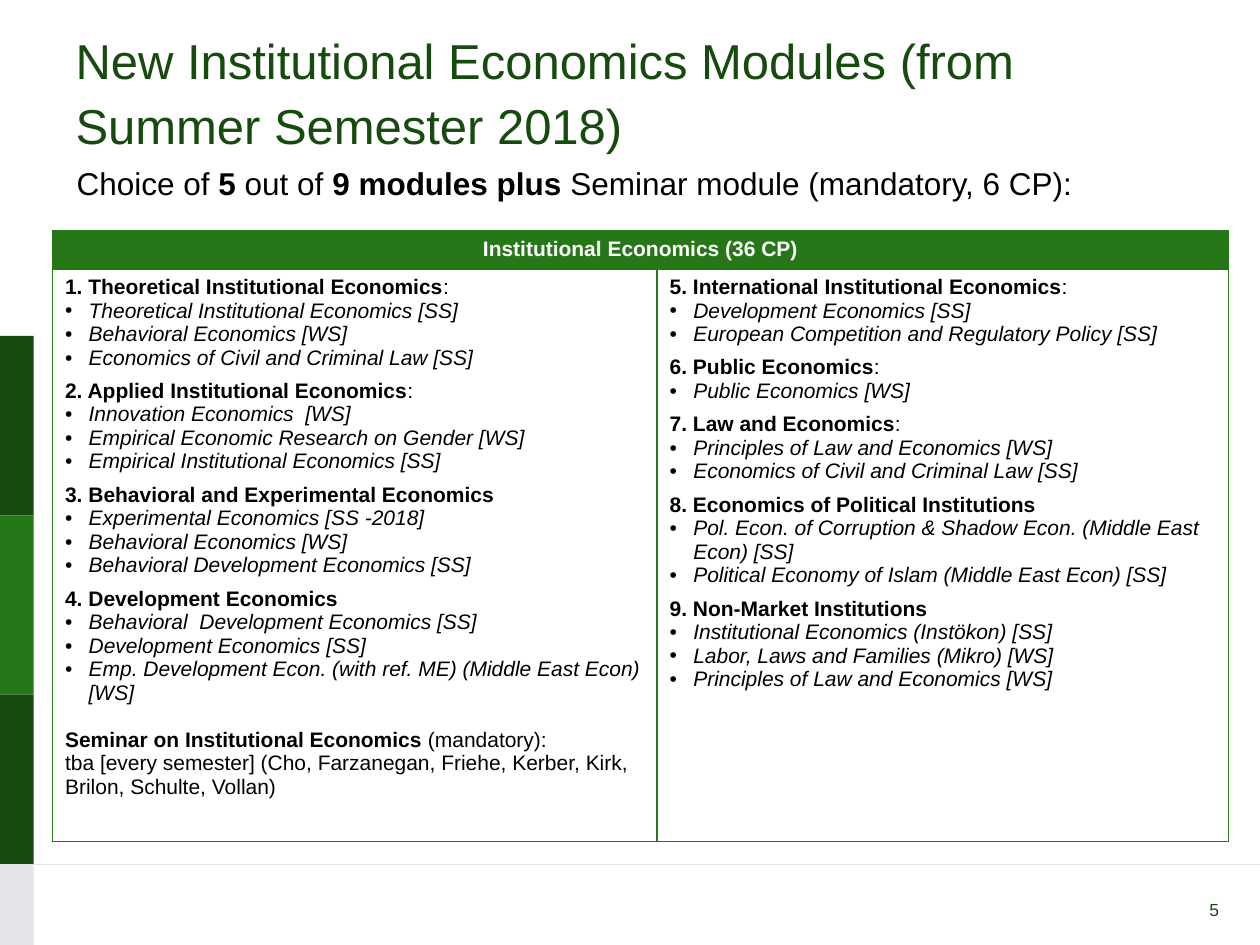
from lxml import etree
from pptx import Presentation
from pptx.dml.color import RGBColor
from pptx.enum import shapes, text
from pptx.oxml import ns
from pptx.util import Pt

DARK_GREEN = RGBColor(0x17, 0x4A, 0x0E)
GREEN = RGBColor(0x25, 0x77, 0x17)
GREY = RGBColor(0xE4, 0xE5, 0xEA)
BLACK = RGBColor(0, 0, 0)
WHITE = RGBColor(0xFF, 0xFF, 0xFF)

BOLD = {"bold": True}
ITALIC = {"italic": True}
SECTION_GAP = 5.6
SEMINAR_GAP = 13.4

LEFT_SECTIONS = [
    ("1. Theoretical Institutional Economics", ":", [
        "Theoretical Institutional Economics [SS]",
        "Behavioral Economics [WS]",
        "Economics of Civil and Criminal Law [SS]"]),
    ("2. Applied Institutional Economics", ":", [
        "Innovation Economics  [WS]",
        "Empirical Economic Research on Gender [WS]",
        "Empirical Institutional Economics [SS]"]),
    ("3. Behavioral and Experimental Economics", "", [
        "Experimental Economics [SS -2018]",
        "Behavioral Economics [WS]",
        "Behavioral Development Economics [SS]"]),
    ("4. Development Economics", "", [
        "Behavioral  Development Economics [SS]",
        "Development Economics [SS]",
        "Emp. Development Econ. (with ref. ME) (Middle East Econ) [WS]"]),
    ("Seminar on Institutional Economics ",
     "(mandatory): \ntba [every semester] (Cho, Farzanegan, Friehe, Kerber, "
     "Kirk, Brilon, Schulte, Vollan)", []),
]
RIGHT_SECTIONS = [
    ("5. International Institutional Economics", ":", [
        "Development Economics [SS]",
        "European Competition and Regulatory Policy [SS]"]),
    ("6. Public Economics", ":", ["Public Economics [WS]"]),
    ("7. Law and Economics", ":", [
        "Principles of Law and Economics [WS]",
        "Economics of Civil and Criminal Law [SS]"]),
    ("8. Economics of Political Institutions", "", [
        "Pol. Econ. of Corruption & Shadow Econ. (Middle East Econ) [SS]",
        "Political Economy of Islam (Middle East Econ) [SS]"]),
    ("9. Non-Market Institutions", "", [
        "Institutional Economics (Instökon) [SS]",
        "Labor, Laws and Families (Mikro) [WS]",
        "Principles of Law and Economics [WS]"]),
]


class SlideBuilder:
    font_name = "Arial"
    indent = Pt(13.5)
    tab = Pt(14.4)

    def __init__(self, slide):
        self.slide = slide

    def apply(self, target, values):
        for name, value in values.items():
            setattr(target, name, value)

    def add_runs(self, paragraph, pieces, size, color=BLACK):
        for content, style in pieces:
            for index, line in enumerate(content.split("\n")):
                if index:
                    paragraph.add_line_break()
                run = paragraph.add_run()
                run.text = line
                values = {"name": self.font_name, "size": Pt(size),
                          "bold": False, "italic": False, **style}
                self.apply(run.font, values)
                run.font.color.rgb = color

    def bar(self, left, top, width, height, color):
        shape = self.slide.shapes.add_shape(
            shapes.MSO_SHAPE.RECTANGLE, Pt(left), Pt(top), Pt(width), Pt(height))
        shape.shadow.inherit = False
        shape.fill.solid()
        shape.fill.fore_color.rgb = color
        shape.line.fill.background()

    def line(self, left, top, right, color):
        connector = self.slide.shapes.add_connector(
            shapes.MSO_CONNECTOR.STRAIGHT, Pt(left), Pt(top), Pt(right), Pt(top))
        connector.line.color.rgb = color
        connector.line.width = Pt(0.5)
        etree.SubElement(connector._element.spPr, ns.qn("a:effectLst"))

    def title(self, content, left, top, width, height):
        shape = self.slide.shapes.title
        self.apply(shape, {"left": Pt(left), "top": Pt(top),
                           "width": Pt(width), "height": Pt(height)})
        frame = shape.text_frame
        self.apply(frame, {"word_wrap": True, "auto_size": text.MSO_AUTO_SIZE.NONE,
                           "vertical_anchor": text.MSO_ANCHOR.MIDDLE})
        paragraph = frame.paragraphs[0]
        self.apply(paragraph, {"alignment": text.PP_ALIGN.LEFT, "line_spacing": 1.1})
        self.add_runs(paragraph, [(content, {})], 28, DARK_GREEN)

    def label(self, pieces, left, top, width, height, size, color):
        shape = self.slide.shapes.add_textbox(
            Pt(left), Pt(top), Pt(width), Pt(height))
        shape.text_frame.word_wrap = True
        self.add_runs(shape.text_frame.paragraphs[0], pieces, size, color)

    def bullet(self, paragraph):
        properties = paragraph._p.get_or_add_pPr()
        properties.set("marL", str(self.indent))
        properties.set("indent", str(-self.indent))
        font = etree.SubElement(properties, ns.qn("a:buFont"))
        font.set("typeface", self.font_name)
        etree.SubElement(properties, ns.qn("a:buChar")).set("char", "•")
        tabs = etree.SubElement(properties, ns.qn("a:tabLst"))
        stop = etree.SubElement(tabs, ns.qn("a:tab"))
        stop.set("pos", str(self.tab))
        stop.set("algn", "l")

    def sections(self, cell, entries):
        frame = cell.text_frame
        for index, (heading, suffix, items) in enumerate(entries):
            paragraph = frame.add_paragraph() if index else frame.paragraphs[0]
            if index:
                paragraph.space_before = Pt(SECTION_GAP if items else SEMINAR_GAP)
            pieces = [(heading, BOLD), (suffix, {})]
            self.add_runs(paragraph, [piece for piece in pieces if piece[0]], 12)
            for item in items:
                paragraph = frame.add_paragraph()
                self.bullet(paragraph)
                self.add_runs(paragraph, [(item, ITALIC)], 12)

    def style_cell(self, cell, fill):
        properties = cell._tc.get_or_add_tcPr()
        for side in ("lnL", "lnR", "lnT", "lnB"):
            border = etree.SubElement(properties, ns.qn("a:" + side), w=str(Pt(1)))
            solid = etree.SubElement(border, ns.qn("a:solidFill"))
            etree.SubElement(solid, ns.qn("a:srgbClr"), val=str(GREEN))
        cell.fill.solid()
        cell.fill.fore_color.rgb = fill

    def module_table(self, heading, columns, left, top, widths, heights):
        table = self.slide.shapes.add_table(
            len(heights), len(widths), Pt(left), Pt(top),
            Pt(sum(widths)), Pt(sum(heights))).table
        table.horz_banding = False
        for column, width in zip(table.columns, widths):
            column.width = Pt(width)
        for row, height, fill in zip(table.rows, heights, (GREEN, WHITE)):
            row.height = Pt(height)
            for cell in row.cells:
                self.style_cell(cell, fill)
        header = table.cell(0, 0)
        header.merge(table.cell(0, len(widths) - 1))
        paragraph = header.text_frame.paragraphs[0]
        paragraph.alignment = text.PP_ALIGN.CENTER
        self.add_runs(paragraph, [(heading, BOLD)], 12, WHITE)
        for index, entries in enumerate(columns):
            self.sections(table.cell(1, index), entries)


def main():
    presentation = Presentation()
    presentation.slide_width, presentation.slide_height = Pt(720), Pt(540)
    builder = SlideBuilder(
        presentation.slides.add_slide(presentation.slide_layouts[5]))

    bar_edges = [192, 294.5, 397, 494, 540]
    bar_colors = [DARK_GREEN, GREEN, DARK_GREEN, GREY]
    for top, bottom, color in zip(bar_edges, bar_edges[1:], bar_colors):
        builder.bar(0, top, 19.3, bottom - top, color)
    builder.line(0, 494, 720, GREY)

    builder.title("New Institutional Economics Modules (from Summer Semester 2018)",
                  36, 6, 648, 90)
    builder.label([("Choice of ", {}), ("5", BOLD), (" out of ", {}),
                   ("9 modules plus ", BOLD),
                   ("Seminar module (mandatory, 6 CP):", {})],
                  36.7, 90, 635, 29, 18, BLACK)
    builder.module_table("Institutional Economics (36 CP)",
                         [LEFT_SECTIONS, RIGHT_SECTIONS],
                         30, 132, [345.5, 326.5], [21.8, 327.2])
    builder.label([("5", {})], 684, 510, 36, 29, 10, DARK_GREEN)
    presentation.save("out.pptx")


if __name__ == "__main__":
    main()
